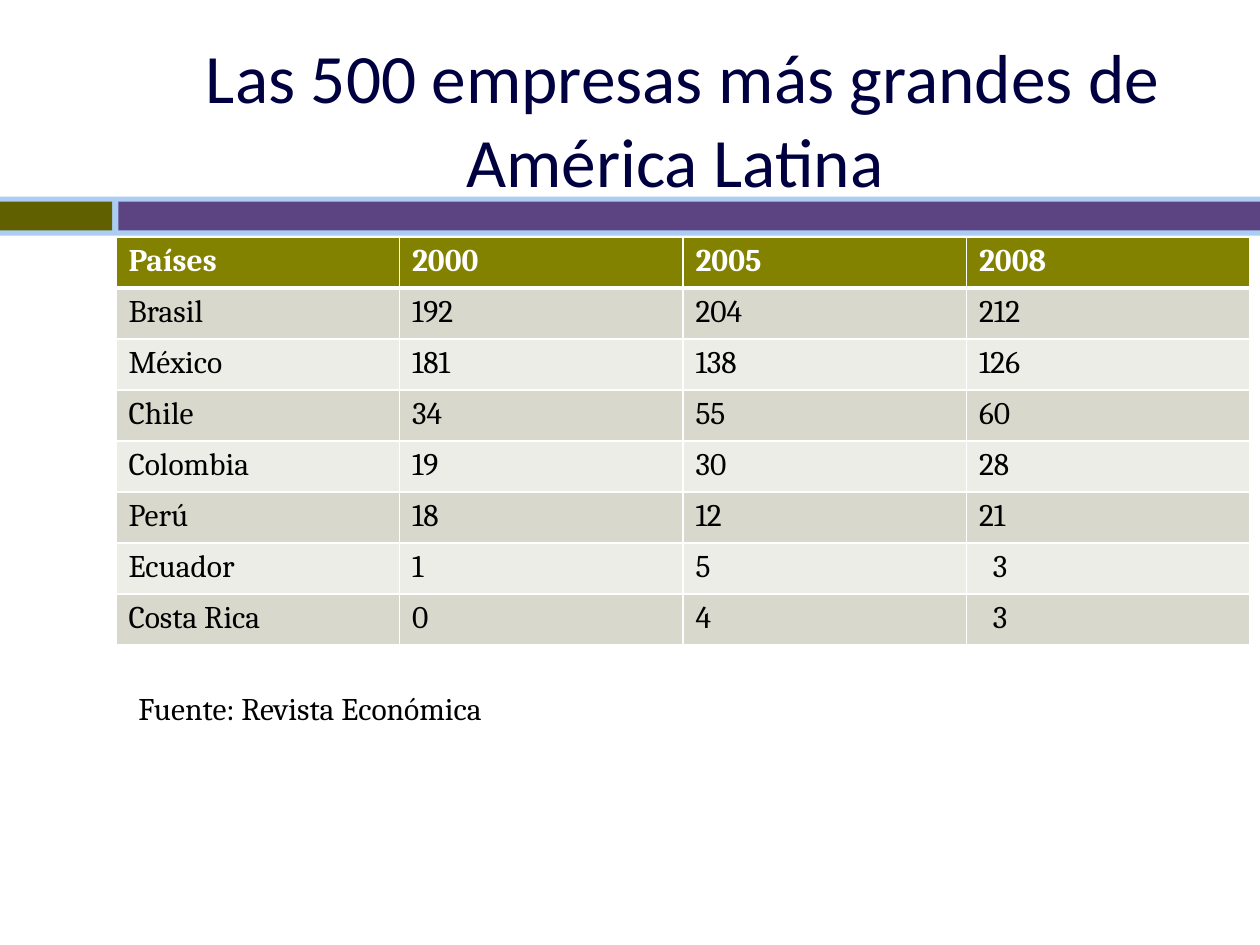
from lxml import etree
from pptx import Presentation
from pptx.dml.color import RGBColor
from pptx.enum import shapes, text
from pptx.oxml import ns
from pptx.util import Inches, Pt

COLORS = {
    "title": "000040", "text": "000000", "white": "FFFFFF",
    "band": "ABCDF4", "olive": "606000", "purple": "5C4381",
    "header": "828200", "odd": "D8D8CC", "even": "EDEDE7",
}
ROWS = [
    ("Países", "2000", "2005", "2008"),
    ("Brasil", "192", "204", "212"),
    ("México", "181", "138", "126"),
    ("Chile", "34", "55", "60"),
    ("Colombia", "19", "30", "28"),
    ("Perú", "18", "12", "21"),
    ("Ecuador", "1", "5", "3"),
    ("Costa Rica", "0", "4", "3"),
]
INDENTED = {(6, 3), (7, 3)}


def rgb(name):
    return RGBColor.from_string(COLORS[name])


def style(p, size, font, color, bold=False):
    p.font.size, p.font.name, p.font.bold = Pt(size), font, bold
    p.font.color.rgb = rgb(color)


def add_bar(s, left, top, width, height, color):
    bar = s.shapes.add_shape(shapes.MSO_SHAPE.RECTANGLE, Inches(left),
                             Inches(top), Inches(width), Inches(height))
    bar.shadow.inherit = False
    bar.fill.solid()
    bar.fill.fore_color.rgb = rgb(color)
    bar.line.fill.background()


def add_divider(s, left, top, width, height):
    """Pale band holding a short olive bar and a long purple one."""
    add_bar(s, left, top, width, height, "band")
    inset, split = 0.04, 0.94
    inner = height - 2 * inset
    add_bar(s, left, top + inset, split - 0.05, inner, "olive")
    add_bar(s, left + split, top + inset, width - split, inner, "purple")


def add_title(s, left, top, width, height):
    title = s.shapes.title
    title.left, title.top = Inches(left), Inches(top)
    title.width, title.height = Inches(width), Inches(height)
    tf = title.text_frame
    tf.text = "Las 500 empresas más grandes de América Latina "
    tf.vertical_anchor = text.MSO_ANCHOR.MIDDLE
    tf.auto_size = text.MSO_AUTO_SIZE.NONE
    p = tf.paragraphs[0]
    p.alignment = text.PP_ALIGN.CENTER
    style(p, 39.6, "Calibri", "title")


def set_borders(cell, bottom):
    """White cell borders, 1 pt except for the given bottom width."""
    tc_pr = cell._tc.get_or_add_tcPr()
    for side, width in zip("LRTB", (1, 1, 1, bottom)):
        ln = etree.SubElement(tc_pr, ns.qn("a:ln" + side), w=str(Pt(width)))
        fill = etree.SubElement(ln, ns.qn("a:solidFill"))
        etree.SubElement(fill, ns.qn("a:srgbClr"), val=COLORS["white"])


def add_country_table(s, left, top, width, height):
    table = s.shapes.add_table(len(ROWS), len(ROWS[0]), Inches(left),
                               Inches(top), Inches(width), Inches(height)).table
    for i, row in enumerate(ROWS):
        header = i == 0
        fill = "header" if header else "odd" if i % 2 else "even"
        for j, value in enumerate(row):
            cell = table.cell(i, j)
            cell.text = value
            if (i, j) in INDENTED:
                cell.margin_left = Inches(0.21)
            set_borders(cell, 3 if header else 1)
            cell.fill.solid()
            cell.fill.fore_color.rgb = rgb(fill)
            style(cell.text_frame.paragraphs[0], 18, "Cambria",
                  "white" if header else "text", header)


def add_source(s, left, top, width, height):
    tf = s.shapes.add_textbox(Inches(left), Inches(top), Inches(width),
                              Inches(height)).text_frame
    tf.word_wrap = True
    tf.text = "Fuente: Revista Económica"
    style(tf.paragraphs[0], 18, "Cambria", "text")


def main():
    prs = Presentation()
    prs.slide_width, prs.slide_height = Inches(10), Inches(7.5)
    s = prs.slides.add_slide(prs.slide_layouts[5])
    add_divider(s, 0, 1.56, 10, 0.31)
    add_title(s, 0.92, 0.31, 9, 1.25)
    add_country_table(s, 0.92, 1.88, 9, 3.24)
    add_source(s, 1, 5.42, 3.79, 0.4)
    prs.save("out.pptx")


if __name__ == "__main__":
    main()
